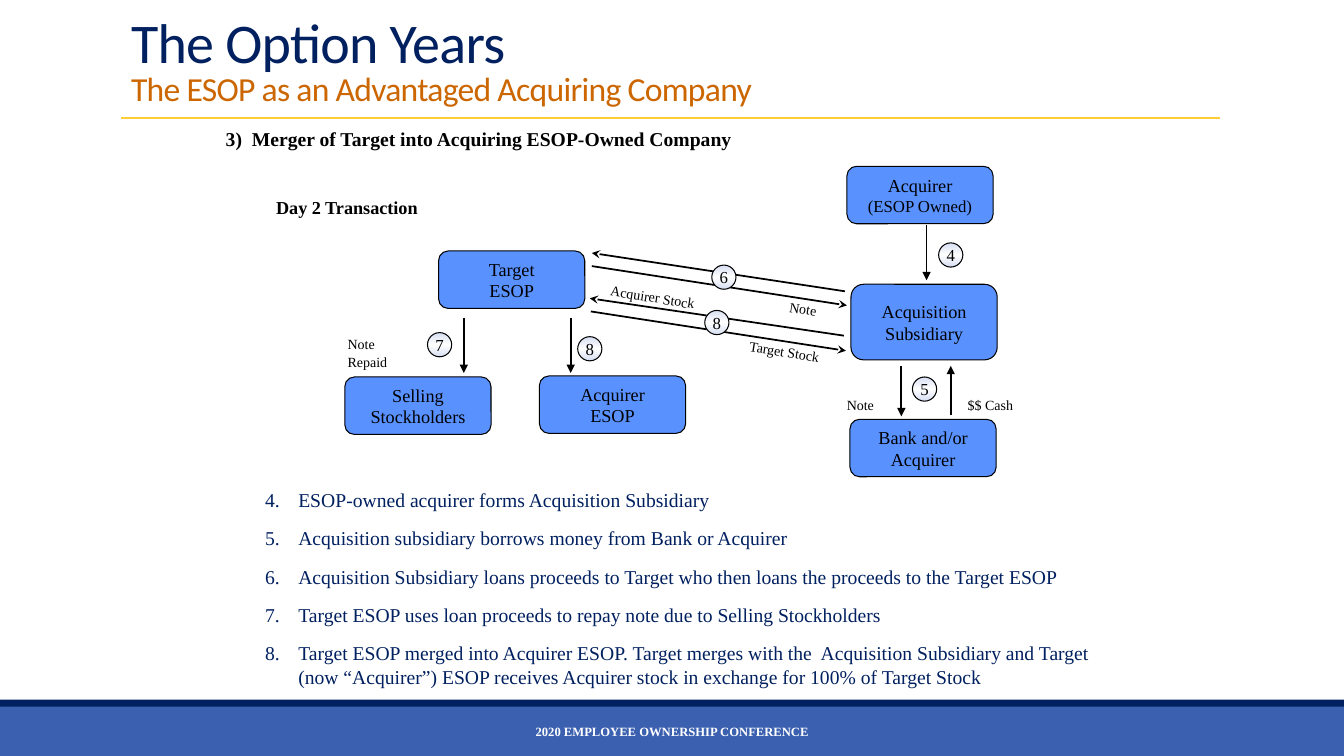
from copy import deepcopy
from dataclasses import dataclass

from lxml import etree
from pptx import Presentation
from pptx.dml.color import RGBColor
from pptx.enum.shapes import MSO_CONNECTOR, MSO_SHAPE
from pptx.enum.text import MSO_ANCHOR, MSO_AUTO_SIZE, PP_ALIGN
from pptx.oxml.ns import qn
from pptx.util import Inches, Pt

STRAIGHT = MSO_CONNECTOR.STRAIGHT
RECTANGLE, ROUNDED, OVAL = MSO_SHAPE.RECTANGLE, MSO_SHAPE.ROUNDED_RECTANGLE, MSO_SHAPE.OVAL
TOP, MIDDLE, BOTTOM = MSO_ANCHOR.TOP, MSO_ANCHOR.MIDDLE, MSO_ANCHOR.BOTTOM
LEFT, CENTER = PP_ALIGN.LEFT, PP_ALIGN.CENTER
SERIF = "Times New Roman"
BLACK, WHITE, NAVY = "000000", "FFFFFF", "002060"
BOX_WIDTH, BADGE_SIZE = 1.45, 0.24


@dataclass
class Span:
    text: str
    size: float
    color: str = BLACK
    bold: bool = False
    font: str = SERIF


@dataclass
class Party:
    left: float
    top: float
    lines: list[Span]
    height: float = 0.57


@dataclass
class Arrow:
    start: tuple[float, float]
    tip: tuple[float, float]
    head: str = "triangle"


@dataclass
class Badge:
    left: float
    top: float
    number: str


@dataclass
class Label:
    left: float
    top: float
    width: float
    height: float
    spans: list[Span]
    rotation: float = 0
    align: PP_ALIGN = LEFT
    anchor: MSO_ANCHOR = TOP


PARTIES = [
    Party(3.42, 3.74, [Span("Selling", 13), Span("Stockholders", 13)]),
    Party(4.35, 2.49, [Span("Target", 13), Span("ESOP", 13)]),
    Party(5.35, 3.73, [Span("Acquirer", 13), Span("ESOP", 13)]),
    Party(8.4, 1.65, [Span("Acquirer", 13), Span("(ESOP Owned)", 12)]),
    Party(8.43, 4.16, [Span("Bank and/or Acquirer", 13)]),
    Party(8.44, 2.82, [Span("Acquisition Subsidiary", 13)], 0.75),
]
ARROWS = [
    Arrow((8.38, 2.89), (5.87, 2.51), "stealth"),
    Arrow((5.87, 2.64), (8.4, 3.03), "stealth"),
    Arrow((8.37, 3.33), (5.85, 2.96), "stealth"),
    Arrow((5.86, 3.09), (8.39, 3.48), "stealth"),
    Arrow((4.6, 3.15), (4.6, 3.7)),
    Arrow((5.66, 3.15), (5.66, 3.7)),
    Arrow((9.19, 2.23), (9.19, 2.78)),
    Arrow((8.94, 3.63), (8.94, 4.13)),
    Arrow((9.43, 4.12), (9.43, 3.63)),
]
BADGES = [
    Badge(9.31, 2.41, "4"), Badge(9.05, 3.74, "5"), Badge(7.06, 2.63, "6"),
    Badge(4.24, 3.3, "7"), Badge(5.73, 3.34, "8"), Badge(6.99, 3.08, "8"),
]
LABELS = [
    Label(2.14, 1.21, 8.08, 0.34,
          [Span("3)  Merger of Target into Acquiring ESOP-Owned Company", 14, bold=True)]),
    Label(2.64, 1.9, 1.94, 0.32, [Span("Day 2 Transaction", 13, bold=True)]),
    Label(3.35, 3.24, 0.87, 0.49, [Span("Note", 10), Span(" ", 13), Span("Repaid", 10)]),
    Label(8.3, 3.88, 0.72, 0.27, [Span("Note", 10)]),
    Label(9.5, 3.88, 1.04, 0.27, [Span("$$ Cash", 10)]),
    Label(5.95, 2.87, 1.75, 0.27, [Span("Acquirer Stock", 10)], 9),
    Label(7.33, 3.39, 1.34, 0.27, [Span("Target Stock", 10)], 9),
    Label(7.73, 2.96, 0.86, 0.27, [Span("Note", 10)], 9),
    Label(4.03, 7.06, 5.27, 0.4,
          [Span("2020 EMPLOYEE OWNERSHIP CONFERENCE", 9, WHITE, True)], 0, CENTER, MIDDLE),
]
STEPS = [
    "ESOP-owned acquirer forms Acquisition Subsidiary",
    "Acquisition subsidiary borrows money from Bank or Acquirer",
    "Acquisition Subsidiary loans proceeds to Target who then loans the proceeds to the Target ESOP",
    "Target ESOP uses loan proceeds to repay note due to Selling Stockholders",
    "Target ESOP merged into Acquirer ESOP. Target merges with the  Acquisition Subsidiary and Target "
    "(now “Acquirer”) ESOP receives Acquirer stock in exchange for 100% of Target Stock",
]


def rgb(color: str) -> RGBColor:
    return RGBColor.from_string(color)


def add_span(para, span: Span):
    run = para.add_run()
    run.text = span.text
    font = run.font
    font.name, font.size, font.bold = span.font, Pt(span.size), span.bold
    font.color.rgb = rgb(span.color)
    return run


def next_paragraph(frame, index: int):
    return frame.add_paragraph() if index else frame.paragraphs[0]


def add_shape(page, kind, left: float, top: float, width: float, height: float,
              fill: str, outlined: bool = False):
    shape = page.shapes.add_shape(kind, Inches(left), Inches(top), Inches(width), Inches(height))
    shape.shadow.inherit = False
    shape.fill.solid()
    shape.fill.fore_color.rgb = rgb(fill)
    if outlined:
        shape.line.color.rgb = rgb(BLACK)
        shape.line.width = Pt(0.75)
    else:
        shape.line.fill.background()
    return shape


def add_line(page, start, end, color: str, width: float):
    line = page.shapes.add_connector(STRAIGHT, *(Inches(value) for value in (*start, *end)))
    line.line.color.rgb = rgb(color)
    line.line.width = Pt(width)
    etree.SubElement(line._element.spPr, qn("a:effectLst"))
    return line


def add_arrow(page, arrow: Arrow) -> None:
    line = add_line(page, arrow.start, arrow.tip, BLACK, 1.25)
    etree.SubElement(line.line._get_or_add_ln(), qn("a:tailEnd"), type=arrow.head)


def add_party(page, party: Party) -> None:
    box = add_shape(page, ROUNDED, party.left, party.top, BOX_WIDTH, party.height, "5991FF", True)
    frame = box.text_frame
    frame.vertical_anchor = MIDDLE
    frame.margin_top = frame.margin_bottom = 0
    for index, span in enumerate(party.lines):
        para = next_paragraph(frame, index)
        para.alignment = CENTER
        add_span(para, span)


def add_badge(page, badge: Badge) -> None:
    circle = add_shape(page, OVAL, badge.left, badge.top, BADGE_SIZE, BADGE_SIZE, WHITE, True)
    fill = circle.fill
    fill.gradient()
    fill.gradient_angle = 90
    stop_list = circle._element.spPr.find(".//" + qn("a:gsLst"))
    stop_list.append(deepcopy(stop_list[0]))
    for stop, position, color in zip(fill.gradient_stops, (0, 0.5, 1), ("D6DEF1", WHITE, "D6DEF1")):
        stop.position = position
        stop.color.rgb = rgb(color)
    frame = circle.text_frame
    frame.word_wrap = False
    frame.vertical_anchor = MIDDLE
    frame.margin_left = frame.margin_right = frame.margin_top = frame.margin_bottom = 0
    frame.paragraphs[0].alignment = CENTER
    add_span(frame.paragraphs[0], Span(badge.number, 12))


def add_label(page, label: Label):
    box = page.shapes.add_textbox(Inches(label.left), Inches(label.top),
                                  Inches(label.width), Inches(label.height))
    box.rotation = label.rotation
    frame = box.text_frame
    frame.word_wrap = True
    frame.vertical_anchor = label.anchor
    para = frame.paragraphs[0]
    para.alignment = label.align
    for span in label.spans:
        add_span(para, span)
    return frame


def add_steps(page) -> None:
    frame = add_label(page, Label(2.53, 4.79, 8.42, 2.33, []))
    for index, step in enumerate(STEPS):
        para = next_paragraph(frame, index)
        if index:
            para.space_before = Pt(10.6)
        properties = para._p.get_or_add_pPr()
        properties.set("marL", str(Inches(0.33)))
        properties.set("indent", str(-Inches(0.33)))
        etree.SubElement(properties, qn("a:buAutoNum"), type="arabicPeriod", startAt="4")
        add_span(para, Span(step, 14, NAVY))


def set_title(page) -> None:
    title = page.shapes.title
    title.left, title.top, title.width, title.height = (Inches(v) for v in (1.2, 0.09, 11, 1.04))
    frame = title.text_frame
    frame.auto_size = MSO_AUTO_SIZE.NONE
    frame.vertical_anchor = BOTTOM
    para = frame.paragraphs[0]
    para.alignment, para.line_spacing = LEFT, 0.85
    heading = add_span(para, Span("The Option Years", 40, NAVY, font="Calibri"))
    para.add_line_break()
    subheading = add_span(para, Span("The ESOP as an Advantaged Acquiring Company", 24, "CC6600",
                                     font="Calibri"))
    for run in (heading, subheading):
        run.font._element.set("spc", "-50")


def main() -> None:
    deck = Presentation()
    deck.slide_width, deck.slide_height = Inches(13.33), Inches(7.5)
    page = deck.slides.add_slide(deck.slide_layouts[5])
    set_title(page)
    add_shape(page, RECTANGLE, 0, 7, 13.33, 0.5, "3B60AF")
    add_shape(page, RECTANGLE, 0, 6.94, 13.33, 0.07, NAVY)
    add_line(page, (1.2, 1.17), (12.1, 1.17), "FFCC33", 1)
    for draw, items in ((add_arrow, ARROWS), (add_party, PARTIES),
                        (add_badge, BADGES), (add_label, LABELS)):
        for item in items:
            draw(page, item)
    add_steps(page)
    deck.save("out.pptx")


if __name__ == "__main__":
    main()
